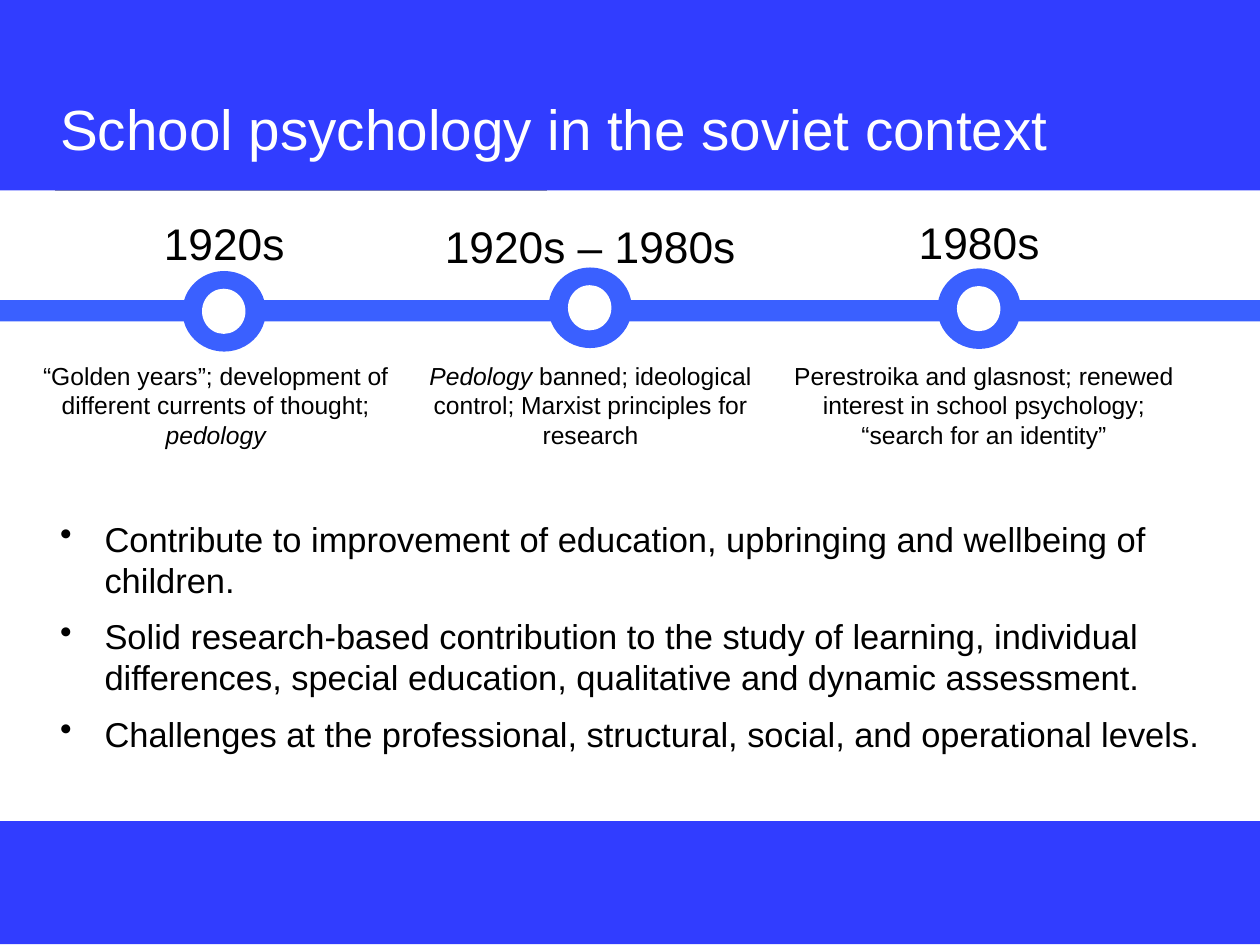
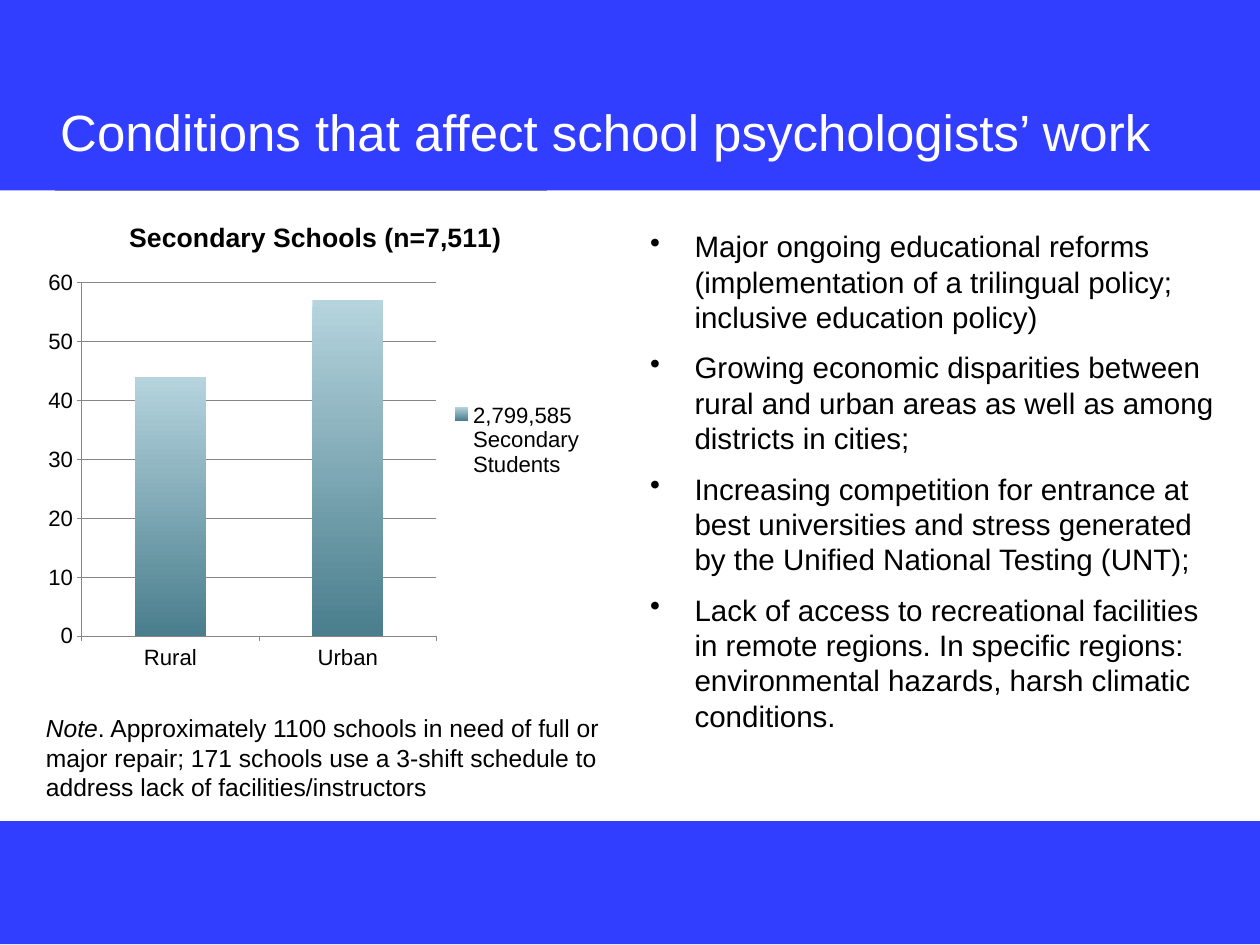
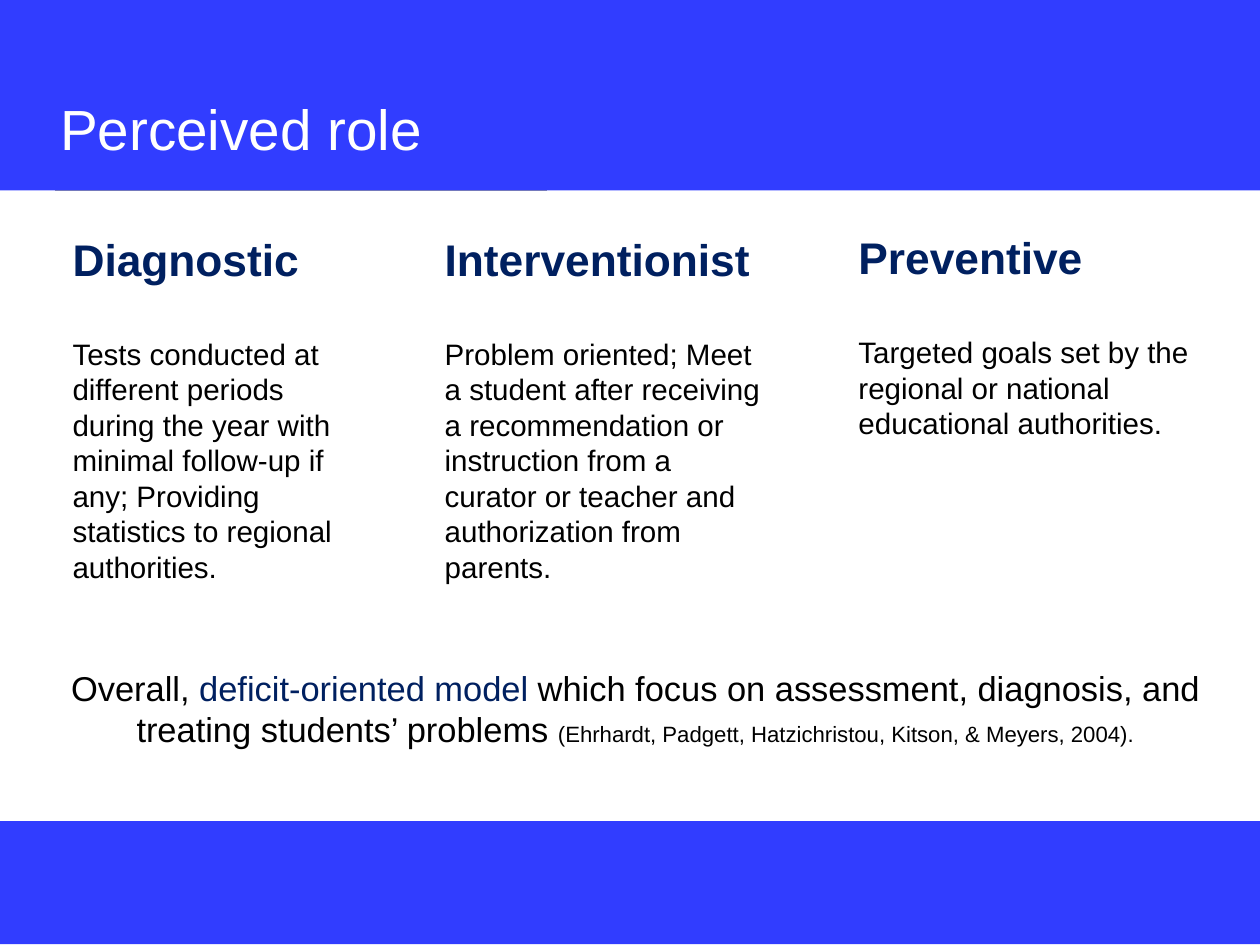
from collections import namedtuple

from lxml import etree
from pptx import Presentation
from pptx.chart.data import CategoryChartData
from pptx.dml.color import RGBColor
from pptx.enum.chart import XL_CHART_TYPE, XL_LEGEND_POSITION, XL_TICK_MARK
from pptx.enum.shapes import MSO_CONNECTOR, MSO_SHAPE
from pptx.enum.text import MSO_ANCHOR, PP_ALIGN
from pptx.oxml.ns import qn
from pptx.util import Inches, Pt

COLUMNS = XL_CHART_TYPE.COLUMN_CLUSTERED
LEGEND_RIGHT = XL_LEGEND_POSITION.RIGHT
TICK_OUTSIDE = XL_TICK_MARK.OUTSIDE
STRAIGHT = MSO_CONNECTOR.STRAIGHT
RECTANGLE, OVAL = MSO_SHAPE.RECTANGLE, MSO_SHAPE.OVAL
TOP, MIDDLE, BOTTOM = MSO_ANCHOR.TOP, MSO_ANCHOR.MIDDLE, MSO_ANCHOR.BOTTOM
LEFT, CENTER = PP_ALIGN.LEFT, PP_ALIGN.CENTER

BAND_BLUE = RGBColor(0x31, 0x3D, 0xFF)
TIMELINE_BLUE = RGBColor(0x3A, 0x60, 0xFF)
NAVY = RGBColor(0x00, 0x20, 0x60)
BLACK = RGBColor(0x00, 0x00, 0x00)
WHITE = RGBColor(0xFF, 0xFF, 0xFF)
RULE_GRAY = RGBColor(0x9A, 0x9A, 0x9A)
GRID_GRAY = RGBColor(0x86, 0x86, 0x86)
COLUMN_LIGHT = RGBColor(0xB5, 0xD4, 0xDE)
COLUMN_DARK = RGBColor(0x4A, 0x7E, 0x8D)

FONT = "Arial"
WIDTH, HEIGHT = 14.22, 10.67
TIGHT = (0.06, 0.06)
LOOSE = (0.1, 0.05)

Box = namedtuple("Box", "left top width height")
Span = namedtuple("Span", "text italic color size", defaults=(None, None, None))
Stage = namedtuple("Stage", "center label label_top label_width ring_top caption_left caption")
Role = namedtuple("Role", "box heading body")

TOP_BAND = Box(-0.01, -0.02, 14.24, 2.17)
BOTTOM_BAND = Box(-0.01, 9.27, 14.24, 1.39)
TITLE_BOX = Box(0.62, 0.36, 13.5, 1.53)

STAGES = [
    Stage(2.53, "1920s", 0, 2.86, 0.68, 0.17,
          [[Span("“Golden years”; development of different currents of thought; "),
            Span("pedology", italic=True)]]),
    Stage(6.66, "1920s – 1980s", 0.04, 3.95, 0.64, 4.4,
          [[Span("Pedology", italic=True),
            Span(" banned; ideological control; Marxist principles for research")]]),
    Stage(11.05, "1980s", -0.01, 2.86, 0.65, 8.84,
          ["Perestroika and glasnost; renewed interest in school psychology;",
           "“search for an identity”"]),
]
AIMS = [
    "Contribute to improvement of education, upbringing and wellbeing of children.",
    "Solid research-based contribution to the study of learning, individual differences, "
    "special education, qualitative and dynamic assessment.",
    "Challenges at the professional, structural, social, and operational levels.",
]
CONDITIONS = [
    "Major ongoing educational reforms (implementation of a trilingual policy; "
    "inclusive education policy)",
    "Growing economic disparities between rural and urban areas as well as among "
    "districts in cities;",
    "Increasing competition for entrance at best universities and stress generated by the "
    "Unified National Testing (UNT);",
    "Lack of access to recreational facilities in remote regions. In specific regions: "
    "environmental hazards, harsh climatic conditions.",
]
NOTE = [[
    Span("Note", italic=True),
    Span(". Approximately 1100 schools in need of full or major repair; 171 schools use a "
         "3-shift schedule to address lack of facilities/instructors"),
]]
ROLES = [
    Role(Box(0.72, 2.57, 3.41, 4.14), "Diagnostic",
         "Tests conducted at different periods during the year with minimal follow-up if any; "
         "Providing statistics to regional authorities."),
    Role(Box(4.92, 2.57, 3.88, 4.14), "Interventionist",
         "Problem oriented; Meet a student after receiving a recommendation or instruction "
         "from a curator or teacher and authorization from parents."),
    Role(Box(9.59, 2.55, 4.14, 2.52), "Preventive",
         "Targeted goals set by the regional or national educational authorities."),
]
SUMMARY = [[
    Span("Overall, "),
    Span("deficit-oriented model ", color=NAVY),
    Span("which focus on assessment, diagnosis, and treating students’ problems "),
    Span("(Ehrhardt, Padgett, Hatzichristou, Kitson, & Meyers, 2004).", size=18),
]]


def to_inches(box):
    """Return the four measures of a box as lengths."""
    return [Inches(value) for value in box]


def style_font(font, size, color=BLACK, bold=False):
    """Give a font the deck's typeface with a size, colour and weight."""
    font.name = FONT
    font.size = Pt(size)
    font.color.rgb = color
    font.bold = bold


def add_span(para, span):
    """Append a run that sets only what differs from its paragraph."""
    run = para.add_run()
    run.text = span.text
    if span.italic:
        run.font.italic = True
    if span.color is not None:
        run.font.color.rgb = span.color
    if span.size is not None:
        run.font.size = Pt(span.size)


def add_text(page, box, content, size, color=BLACK, align=LEFT, anchor=TOP, margins=LOOSE):
    """Add a wrapped text box whose paragraphs are strings or lists of spans."""
    frame = page.shapes.add_textbox(*to_inches(box)).text_frame
    frame.word_wrap = True
    frame.vertical_anchor = anchor
    frame.margin_left = frame.margin_right = Inches(margins[0])
    frame.margin_top = frame.margin_bottom = Inches(margins[1])
    for index, item in enumerate(content):
        para = frame.add_paragraph() if index else frame.paragraphs[0]
        para.alignment = align
        style_font(para.font, size, color)
        for span in [Span(item)] if isinstance(item, str) else item:
            add_span(para, span)
    return frame


def add_bullets(page, box, items, size, **options):
    """Add a bulleted list with hanging indents."""
    frame = add_text(page, box, items, size, **options)
    for para in frame.paragraphs:
        para.space_after = Pt(12)
        properties = para._p.get_or_add_pPr()
        properties.set("marL", str(Inches(0.5)))
        properties.set("indent", str(-Inches(0.5)))
        bullet = etree.Element(qn("a:buChar"), char="•")
        properties.find(qn("a:defRPr")).addprevious(bullet)


def add_block(page, kind, box, color):
    """Add a plain filled shape without outline or shadow."""
    block = page.shapes.add_shape(kind, *to_inches(box))
    block.shadow.inherit = False
    block.fill.solid()
    block.fill.fore_color.rgb = color
    block.line.fill.background()


def add_rule(page, left, right, top):
    """Add the thin horizontal rule under the title band."""
    rule = page.shapes.add_connector(
        STRAIGHT, Inches(left), Inches(top), Inches(right), Inches(top))
    rule.line.color.rgb = RULE_GRAY
    rule.line.width = Pt(1)
    etree.SubElement(rule._element.spPr, qn("a:effectLst"))


def add_page(deck, title, title_size=46):
    """Add a slide with the shared bands, rule and title."""
    page = deck.slides.add_slide(deck.slide_layouts[6])
    add_rule(page, 0.62, 6.17, 2.15)
    add_block(page, RECTANGLE, TOP_BAND, BAND_BLUE)
    add_block(page, RECTANGLE, BOTTOM_BAND, BAND_BLUE)
    add_text(page, TITLE_BOX, [title], title_size, WHITE, anchor=BOTTOM, margins=TIGHT)
    return page


def add_stage(page, top, stage):
    """Add one timeline stage: label, ring and caption."""
    centered = {"align": CENTER, "anchor": MIDDLE, "margins": TIGHT}
    label = Box(stage.center - stage.label_width / 2, top + stage.label_top,
                stage.label_width, 0.72)
    ring = Box(stage.center - 0.47, top + stage.ring_top, 0.94, 0.91)
    hole = Box(stage.center - 0.25, ring.top + 0.2, 0.49, 0.51)
    caption = Box(stage.caption_left, top + 1.63, 4.53, 1.12)
    add_text(page, label, [stage.label], 36, **centered)
    add_block(page, OVAL, ring, TIMELINE_BLUE)
    add_block(page, OVAL, hole, WHITE)
    add_text(page, caption, stage.caption, 20, **centered)


def add_timeline(page, box):
    """Add the bar and its stages inside a box."""
    add_block(page, RECTANGLE, Box(box.left, box.top + 1.01, box.width, 0.24), TIMELINE_BLUE)
    for stage in STAGES:
        add_stage(page, box.top, stage)


def style_axis(axis):
    """Give an axis outside ticks and a gray line."""
    axis.major_tick_mark = TICK_OUTSIDE
    axis.format.line.color.rgb = GRID_GRAY


def add_school_chart(page, box):
    """Add the column chart of rural and urban schools."""
    data = CategoryChartData()
    data.categories = ["Rural", "Urban"]
    data.add_series("2,799,585 Secondary Students", [44, 57])
    chart = page.shapes.add_chart(COLUMNS, *to_inches(box), data).chart
    style_font(chart.font, 18)
    chart.has_title = True
    heading = chart.chart_title.text_frame
    heading.text = "Secondary Schools (n=7,511)"
    style_font(heading.paragraphs[0].font, 21.6, bold=True)
    chart.has_legend = True
    chart.legend.position = LEGEND_RIGHT
    chart.legend.include_in_layout = False
    style_axis(chart.category_axis)
    values = chart.value_axis
    style_axis(values)
    values.minimum_scale, values.maximum_scale, values.major_unit = 0, 60, 10
    values.major_gridlines.format.line.color.rgb = GRID_GRAY
    plot = chart.plots[0]
    plot.gap_width = 150
    plot.vary_by_categories = False
    fill = plot.series[0].format.fill
    fill.gradient()
    fill.gradient_angle = 270
    for stop, color in zip(fill.gradient_stops, (COLUMN_LIGHT, COLUMN_DARK)):
        stop.color.rgb = color


def add_role(page, role):
    """Add a role column with a bold heading above its description."""
    frame = add_text(page, role.box, [role.heading, role.body], 24)
    heading = frame.paragraphs[0]
    style_font(heading.font, 36, NAVY, bold=True)
    heading.space_after = Pt(41.4)


def build_context(deck):
    """Build the timeline slide."""
    page = add_page(deck, "School psychology in the soviet context")
    add_timeline(page, Box(0, 2.38, WIDTH, 2.75))
    add_bullets(page, Box(0.62, 5.78, 13.28, 2.8), AIMS, 28, anchor=MIDDLE, margins=TIGHT)


def build_conditions(deck):
    """Build the chart slide."""
    page = add_page(deck, "Conditions that affect school psychologists’ work", 41.4)
    add_school_chart(page, Box(0.42, 2.27, 6.28, 5.4))
    add_text(page, Box(0.42, 8, 7.03, 1.11), NOTE, 20)
    add_bullets(page, Box(7.24, 2.53, 6.73, 6.02), CONDITIONS, 24)


def build_roles(deck):
    """Build the slide of three roles and their summary."""
    page = add_page(deck, "Perceived role")
    for role in ROLES:
        add_role(page, role)
    add_text(page, Box(0.62, 7.48, 13.1, 1.04), SUMMARY, 28, align=CENTER)


def main():
    """Build and save the deck."""
    deck = Presentation()
    deck.slide_width, deck.slide_height = Inches(WIDTH), Inches(HEIGHT)
    build_context(deck)
    build_conditions(deck)
    build_roles(deck)
    deck.save("out.pptx")


if __name__ == "__main__":
    main()
